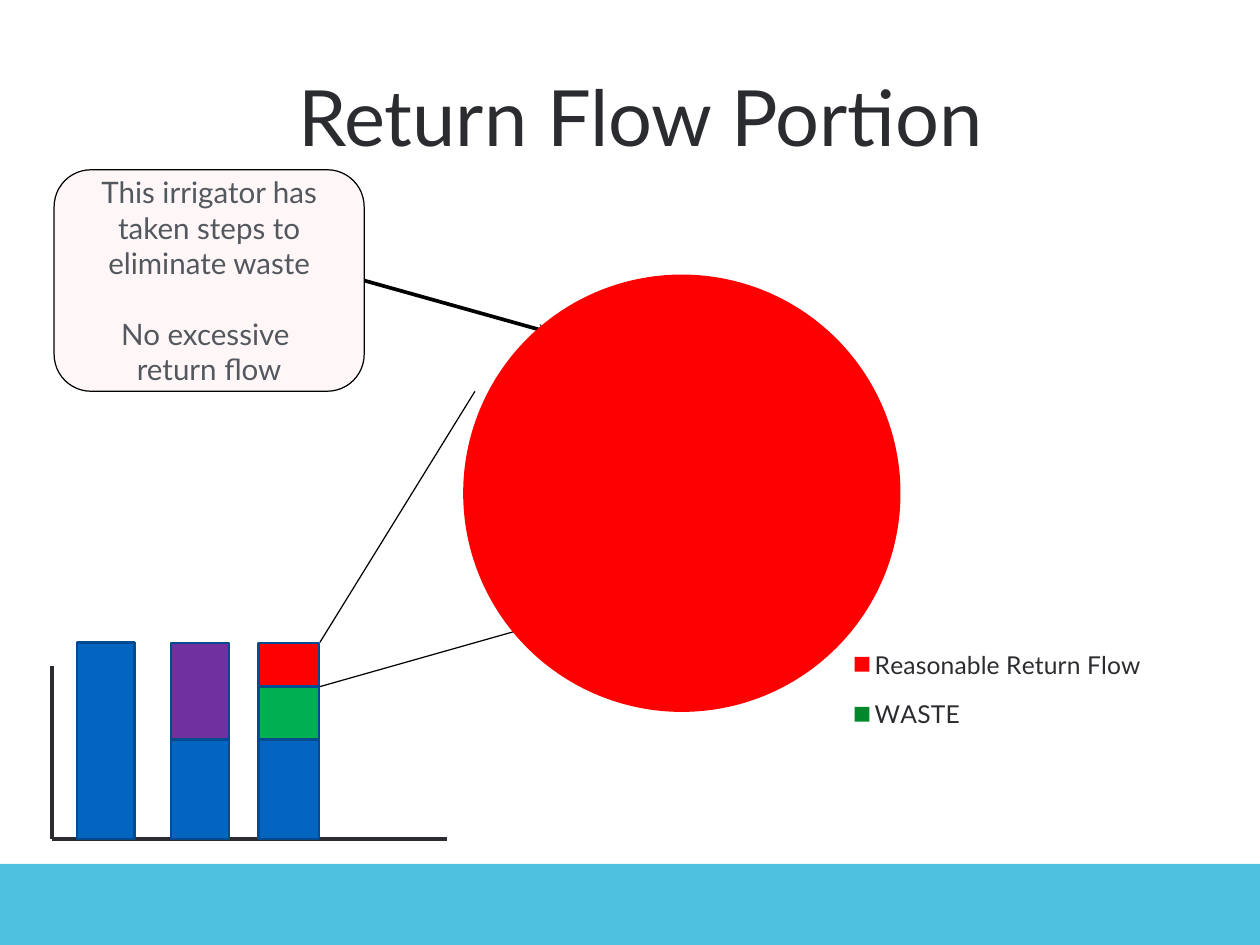
import pptx
import pptx.chart.data
import pptx.dml.color
import pptx.enum.chart
import pptx.enum.shapes
import pptx.enum.text
import pptx.oxml
import pptx.oxml.ns
import pptx.util

Pt = pptx.util.Pt
RGB = pptx.dml.color.RGBColor
Shape = pptx.enum.shapes.MSO_SHAPE
Anchor = pptx.enum.text.MSO_ANCHOR
qn = pptx.oxml.ns.qn

WHITE = RGB(0xFF, 0xFF, 0xFF)
BLACK = RGB(0x00, 0x00, 0x00)
DARK = RGB(0x2A, 0x2C, 0x2F)
GREY = RGB(0x53, 0x58, 0x5F)
AQUA = RGB(0x4D, 0xC1, 0xDF)
BLUE = RGB(0x03, 0x65, 0xC0)
NAVY = RGB(0x02, 0x4B, 0x8E)
GREEN = RGB(0x00, 0xB0, 0x50)
MOSS = RGB(0x00, 0x88, 0x2B)
RED = RGB(0xFF, 0x00, 0x00)
PURPLE = RGB(0x70, 0x30, 0xA0)


def add_tag(parent, tag, **attrs):
    child = parent.makeelement(qn(tag), attrs)
    parent.append(child)
    return child


class Painter:
    font = "Lato"

    def __init__(self, slide):
        self.slide = slide
        self.shapes = slide.shapes

    def box(self, kind, x, y, w, h, fill, edge=None, width=1, alpha=None):
        shape = self.shapes.add_shape(kind, Pt(x), Pt(y), Pt(w), Pt(h))
        shape.shadow.inherit = False
        shape.fill.solid()
        shape.fill.fore_color.rgb = fill
        if alpha:
            tint = shape.fill._xPr.find(".//" + qn("a:srgbClr"))
            add_tag(tint, "a:alpha", val=str(alpha * 1000))
        if edge is None:
            shape.line.fill.background()
        else:
            shape.line.color.rgb = edge
            shape.line.width = Pt(width)
        return shape

    def line(self, x1, y1, x2, y2, color=BLACK, width=1, arrow=False):
        line = self.shapes.add_connector(
            pptx.enum.shapes.MSO_CONNECTOR.STRAIGHT, Pt(x1), Pt(y1), Pt(x2), Pt(y2))
        line.line.color.rgb = color
        line.line.width = Pt(width)
        if arrow:
            add_tag(line.line._get_or_add_ln(), "a:tailEnd", type="stealth")
        add_tag(line._element.spPr, "a:effectLst")

    def text(self, shape, words, size, color, side, top, anchor):
        frame = shape.text_frame
        frame.word_wrap = True
        frame.vertical_anchor = anchor
        frame.margin_left = frame.margin_right = Pt(side)
        frame.margin_top = frame.margin_bottom = Pt(top)
        frame.text = words
        for para in frame.paragraphs:
            para.alignment = pptx.enum.text.PP_ALIGN.CENTER
            for run in para.runs:
                run.font.name = self.font
                run.font.size = Pt(size)
                run.font.color.rgb = color
        return frame

    def title(self, words, x, y, w, h):
        shape = self.shapes.add_textbox(Pt(x), Pt(y), Pt(w), Pt(h))
        self.text(shape, words, 63, DARK, 10, 5, Anchor.TOP)

    def place(self, part, x, y, w, h, inner=False):
        """Put a chart part at fractions of the chart area."""
        layout = part.find(qn("c:layout"))
        if layout is None:
            layout = part.makeelement(qn("c:layout"), {})
            part.insert(1 if part.tag == qn("c:legend") else 0, layout)
        for old in list(layout):
            layout.remove(old)
        manual = add_tag(layout, "c:manualLayout")
        if inner:
            add_tag(manual, "c:layoutTarget", val="inner")
        for name in ("xMode", "yMode"):
            add_tag(manual, "c:" + name, val="edge")
        for name, value in zip("xywh", (x, y, w, h)):
            add_tag(manual, "c:" + name, val=str(value))

    def pie(self, parts, x, y, w, h, burst):
        data = pptx.chart.data.CategoryChartData()
        data.categories = [name for name, value, color in parts]
        data.add_series("Series 1", [value for name, value, color in parts])
        chart = self.shapes.add_chart(
            pptx.enum.chart.XL_CHART_TYPE.PIE, Pt(x), Pt(y), Pt(w), Pt(h), data).chart
        chart.has_title = False
        chart.font.name = self.font
        chart.font.size = Pt(10)
        chart.font.color.rgb = WHITE
        plot = chart.plots[0]
        plot.vary_by_categories = True
        series = plot.series[0]
        for i, (name, value, color) in enumerate(parts):
            fill = series.points[i].format.fill
            fill.solid()
            fill.fore_color.rgb = color
        first = series._element.find(qn("c:dPt"))
        first.addprevious(first.makeelement(qn("c:explosion"), {"val": str(burst)}))
        chart.has_legend = True
        legend = chart.legend
        legend.position = pptx.enum.chart.XL_LEGEND_POSITION.RIGHT
        legend.include_in_layout = False
        legend.font.name = self.font
        legend.font.size = Pt(20)
        legend.font.color.rgb = DARK
        area = chart._chartSpace.chart.plotArea
        self.place(area, 0, 0, 0.719, 0.935, inner=True)
        self.place(legend._element, 0.57, 0.74, 0.41, 0.17)


def main():
    deck = pptx.Presentation()
    deck.slide_width, deck.slide_height = Pt(1024), Pt(768)
    art = Painter(deck.slides.add_slide(deck.slide_layouts[6]))

    # Footer band
    art.box(Shape.RECTANGLE, 0, 702, 1024, 66, AQUA)

    # Small stacked bars on their axes
    base, left = 682, 42
    art.line(left, 541, left, base, DARK, 3.5)
    art.line(363, base, left, base, DARK, 3.5)
    bars = [
        (62.5, 47, [(160, BLUE)]),
        (139, 47, [(81, BLUE), (78.5, PURPLE)]),
        (210, 49.5, [(81, BLUE), (43, GREEN), (35.5, RED)]),
    ]
    for x, w, stack in bars:
        y = base
        for h, color in stack:
            y -= h
            art.box(Shape.RECTANGLE, x, y, w, h, color, NAVY, 2)

    # Title
    art.title("Return Flow Portion", 34, 51, 973, 99)

    # Zoom lines from the red part to the pie
    art.line(260, 522, 386, 318)
    art.line(260, 558, 620, 456)

    # Callout with its arrow
    note = art.box(Shape.ROUNDED_RECTANGLE, 44, 138, 252, 180, RED, BLACK, 1, alpha=3)
    words = ("This irrigator has taken steps to eliminate waste\n"
             "No excessive \nreturn flow")
    frame = art.text(note, words, 24, GREY, 4.5, 4.5, Anchor.MIDDLE)
    frame.paragraphs[1].space_before = Pt(28.8)
    art.line(296, 228, 446, 270, width=3, arrow=True)

    # Pie
    parts = [("Reasonable Return Flow", 100, RED), ("WASTE", 0, MOSS)]
    art.pie(parts, 332, 90, 618, 570, burst=25)

    deck.save("out.pptx")


if __name__ == "__main__":
    main()
